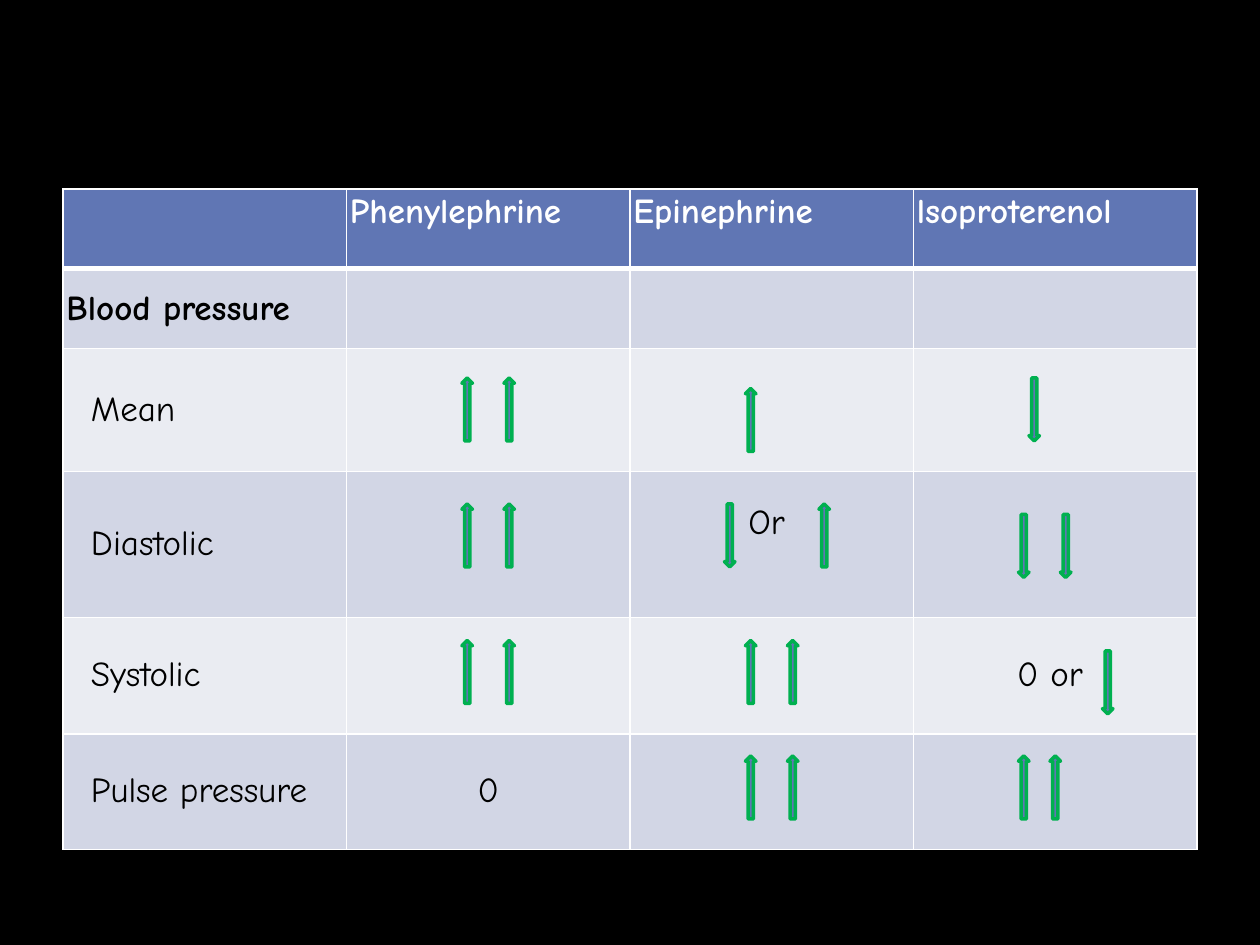
from pptx import Presentation
from pptx.dml.color import RGBColor
from pptx.enum.shapes import MSO_SHAPE as Shape
from pptx.enum.text import MSO_ANCHOR as Anchor, PP_ALIGN as Align
from pptx.oxml.ns import qn
from pptx.util import Pt
from lxml import etree

THEME = {
    "font": "Comic Neue",
    "size": Pt(20),
    "background": RGBColor.from_string("000000"),
    "header": RGBColor.from_string("6076B4"),
    "bands": [RGBColor.from_string("EAECF2"), RGBColor.from_string("D2D6E5")],
    "header_text": RGBColor.from_string("FFFFFF"),
    "body_text": RGBColor.from_string("000000"),
    "border": "FFFFFF",
    "arrow_line": RGBColor.from_string("00B050"),
}


def set_borders(cell, widths):
    """Draw solid borders; widths maps a side (L, R, T, B) to points."""
    properties = cell._tc.get_or_add_tcPr()
    for side, width in widths.items():
        line = etree.SubElement(properties, qn(f"a:ln{side}"), w=str(Pt(width)))
        fill = etree.SubElement(line, qn("a:solidFill"))
        etree.SubElement(fill, qn("a:srgbClr"), val=THEME["border"])


def write_cell(cell, text, color, bold, align):
    paragraph = cell.text_frame.paragraphs[0]
    paragraph.alignment = align
    run = paragraph.add_run()
    run.text = text
    run.font.color.rgb = color
    for name, value in {"name": THEME["font"], "size": THEME["size"], "bold": bold}.items():
        setattr(run.font, name, value)


presentation = Presentation()
presentation.slide_width, presentation.slide_height = Pt(720), Pt(540)
slide = presentation.slides.add_slide(presentation.slide_layouts[6])
slide.background.fill.solid()
slide.background.fill.fore_color.rgb = THEME["background"]

# Table of drug effects
rows = [
    ["", "Phenylephrine", "Epinephrine", "lsoproterenol"],
    ["Blood pressure", "", "", ""],
    ["Mean", "", "", ""],
    ["Diastolic", "", "Or", ""],
    ["Systolic", "", "", "0 or"],
    ["Pulse pressure", "0", "", ""],
]
row_heights = [45.6, 45.6, 70.4, 83.2, 66.6, 66]
table = slide.shapes.add_table(
    len(rows), 4, Pt(36), Pt(108), Pt(648), Pt(sum(row_heights))
).table
for column in table.columns:
    column.width = Pt(162)

for row_index, (texts, height) in enumerate(zip(rows, row_heights)):
    table.rows[row_index].height = Pt(height)
    is_header = row_index == 0
    for column_index, text in enumerate(texts):
        cell = table.cell(row_index, column_index)
        set_borders(cell, {
            "L": 1, "R": 1,
            "T": 3 if row_index == 1 else 1,
            "B": 3 if is_header else 1,
        })
        cell.fill.solid()
        cell.fill.fore_color.rgb = THEME["header"] if is_header else THEME["bands"][row_index % 2]
        cell.vertical_anchor = Anchor.TOP if is_header else Anchor.MIDDLE
        for side in ("left", "right", "top", "bottom"):
            setattr(cell, f"margin_{side}", Pt(2))
        if row_index > 1 and column_index == 0:
            cell.margin_left = Pt(16)
        if text:
            centered = row_index > 1 and column_index > 0
            write_cell(
                cell, text,
                THEME["header_text"] if is_header else THEME["body_text"],
                row_index < 2,
                Align.CENTER if centered else Align.LEFT,
            )

# Leave room for the arrows beside the words
table.cell(3, 2).margin_bottom = Pt(26)
for row_index, column_index in [(3, 2), (4, 3)]:
    table.cell(row_index, column_index).margin_right = Pt(8)

# Arrows: direction, top, left edges
UP, DOWN = Shape.UP_ARROW, Shape.DOWN_ARROW
arrow_rows = [
    # Mean
    (UP, 216, [264, 288]),
    (UP, 222, [426]),
    (DOWN, 216, [588]),
    # Diastolic
    (UP, 288, [264, 288, 468]),
    (DOWN, 288, [414]),
    (DOWN, 294, [582, 606]),
    # Systolic
    (UP, 366, [264, 288, 426, 450]),
    (DOWN, 372, [630]),
    # Pulse pressure
    (UP, 432, [426, 450, 582, 600]),
]
for direction, top, lefts in arrow_rows:
    for left in lefts:
        arrow = slide.shapes.add_shape(direction, Pt(left), Pt(top), Pt(6), Pt(36))
        arrow.shadow.inherit = False
        arrow.fill.solid()
        arrow.fill.fore_color.rgb = THEME["header"]
        arrow.line.color.rgb = THEME["arrow_line"]
        arrow.line.width = Pt(2)

presentation.save("out.pptx")
